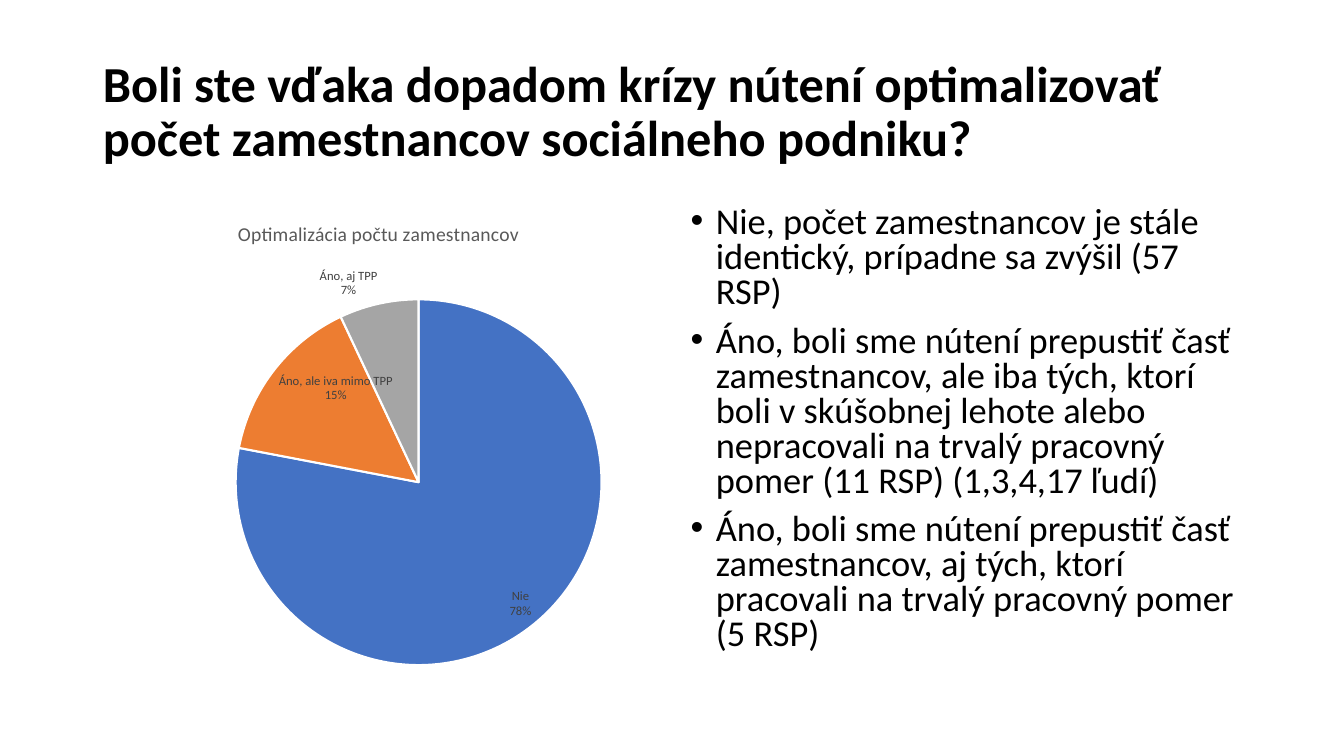
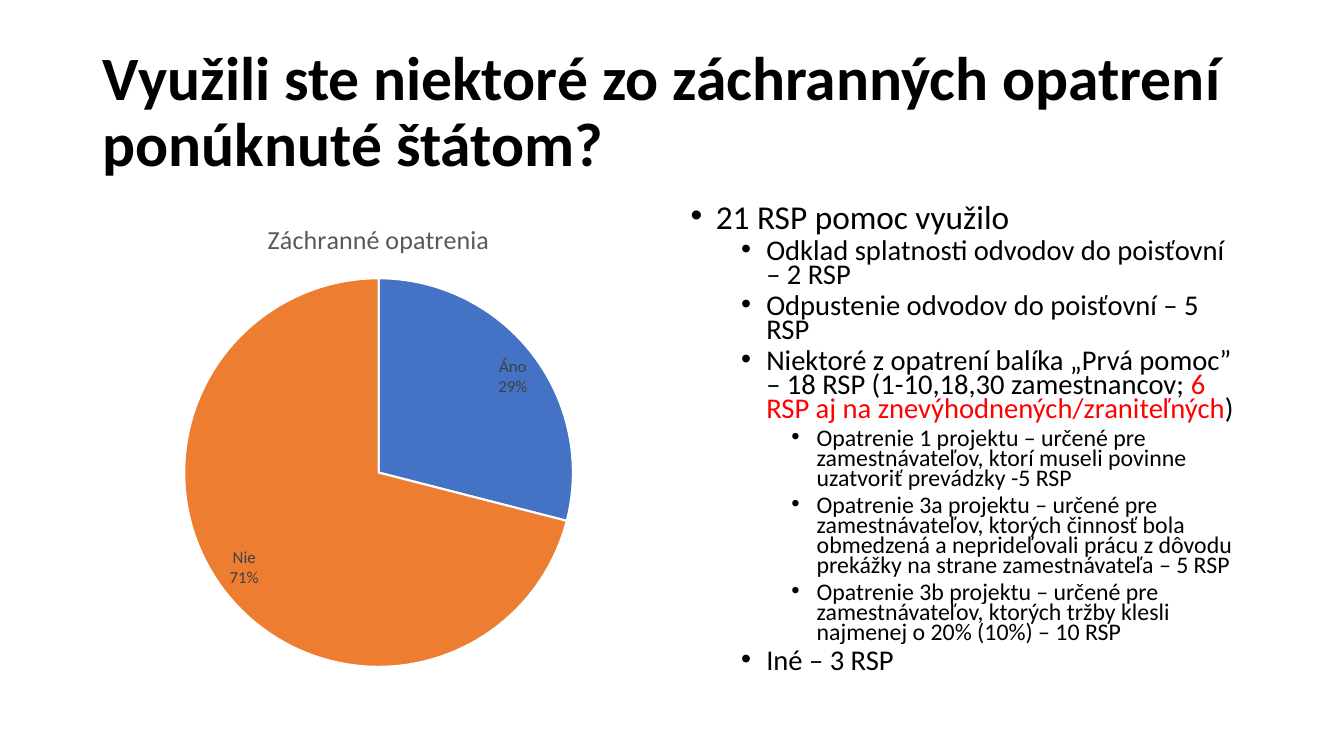
from lxml import etree
from pptx import Presentation
from pptx.chart.data import CategoryChartData
from pptx.dml.color import RGBColor
from pptx.enum.chart import XL_CHART_TYPE, XL_LABEL_POSITION
from pptx.enum.text import MSO_ANCHOR, MSO_AUTO_SIZE, PP_ALIGN
from pptx.oxml.ns import qn
from pptx.util import Inches, Pt

PIE = XL_CHART_TYPE.PIE
INSIDE, OUTSIDE = XL_LABEL_POSITION.INSIDE_END, XL_LABEL_POSITION.OUTSIDE_END
LEFT, TOP, MIDDLE = PP_ALIGN.LEFT, MSO_ANCHOR.TOP, MSO_ANCHOR.MIDDLE
NO_FIT = MSO_AUTO_SIZE.NONE

# Shared style
FONT = "Calibri"
COLORS = {"text": "000000", "accent": "FF0000", "chart_title": "595959",
          "label": "404040", "border": "FFFFFF"}
SLICES = ["4472C4", "ED7D31", "A5A5A5"]
TITLE_BOX = (0.92, 0.4, 11.5, 1.45)
CHART_BOX = (0.92, 2, 5.67, 4.76)
BODY_BOX = (6.75, 2, 5.67, 4.76)


def rgb(name):
    return RGBColor.from_string(COLORS[name])


def style_font(font, size, color="text", bold=False):
    values = {"name": FONT, "size": Pt(size), "bold": bold}
    for attr, value in values.items():
        setattr(font, attr, value)
    font.color.rgb = rgb(color)


def place(sp, box, anchor):
    """Move a placeholder and return its text frame."""
    for attr, value in zip(("left", "top", "width", "height"), box):
        setattr(sp, attr, Inches(value))
    tf = sp.text_frame
    values = {"word_wrap": True, "auto_size": NO_FIT, "vertical_anchor": anchor}
    for attr, value in values.items():
        setattr(tf, attr, value)
    return tf


def add_run(p, text, size, color="text", bold=False):
    r = p.add_run()
    r.text = text
    style_font(r.font, size, color, bold)


def set_title(s, text, size):
    p = place(s.shapes.title, TITLE_BOX, MIDDLE).paragraphs[0]
    p.alignment, p.line_spacing = LEFT, 0.9
    add_run(p, text, size, bold=True)


def set_bullet(p, level):
    pPr = p._p.get_or_add_pPr()
    pPr.set("marL", str(Inches(0.25 + 0.5 * level)))
    pPr.set("indent", str(Inches(-0.25)))
    etree.SubElement(pPr, qn("a:buFont")).set("typeface", "Arial")
    etree.SubElement(pPr, qn("a:buChar")).set("char", "•")


def set_body(s, items, sizes, spacing):
    """Each item is a level and its (text, color) runs; sizes go by level."""
    tf = place(s.placeholders[1], BODY_BOX, TOP)
    for i, (level, runs) in enumerate(items):
        p = tf.add_paragraph() if i else tf.paragraphs[0]
        values = {"level": level, "alignment": LEFT, "line_spacing": spacing,
                  "space_before": Pt(5 if level else 10), "space_after": Pt(0)}
        for attr, value in values.items():
            setattr(p, attr, value)
        set_bullet(p, level)
        for text, color in runs:
            add_run(p, text, sizes[level], color)


def set_plot_area(chart, box):
    """Fix the inner plot area as fractions of the chart."""
    area = next(chart.element.iter(qn("c:plotArea")))
    for old in area.findall(qn("c:layout")):
        area.remove(old)
    layout = etree.Element(qn("c:layout"))
    manual = etree.SubElement(layout, qn("c:manualLayout"))
    values = {"layoutTarget": "inner", "xMode": "edge", "yMode": "edge",
              **dict(zip("xywh", box))}
    for tag, value in values.items():
        etree.SubElement(manual, qn(f"c:{tag}")).set("val", str(value))
    area.insert(0, layout)


def show_name_and_percent(chart):
    """Set every label group to category and percent on two lines."""
    flags = {"showVal": "0", "showCatName": "1", "showPercent": "1"}
    for labels in chart.element.iter(qn("c:dLbls"), qn("c:dLbl")):
        for tag, value in flags.items():
            labels.find(qn(f"c:{tag}")).set("val", value)
        separator = etree.Element(qn("c:separator"))
        separator.text = "\n"
        last = labels.find(qn("c:showBubbleSize"))
        if last is None:
            last = labels.find(qn("c:showPercent"))
        last.addnext(separator)


def add_pie(s, title, shares, title_size, label_size, plot_box, outside=()):
    data = CategoryChartData()
    data.categories = list(shares)
    data.add_series(title, list(shares.values()))
    chart = s.shapes.add_chart(PIE, *map(Inches, CHART_BOX), data).chart
    chart.has_legend = False
    style_font(chart.font, 10)

    # Chart title
    chart.has_title = True
    chart.chart_title.include_in_layout = False
    p = chart.chart_title.text_frame.paragraphs[0]
    add_run(p, title, title_size, "chart_title")

    # Slices
    plot = chart.plots[0]
    plot.vary_by_categories = True
    series = plot.series[0]
    for i in range(len(shares)):
        fmt = series.points[i].format
        fmt.fill.solid()
        fmt.fill.fore_color.rgb = RGBColor.from_string(SLICES[i])
        fmt.line.color.rgb = rgb("border")
        fmt.line.width = Pt(1.5)

    # Labels
    labels = series.data_labels
    values = {"show_value": False, "show_category_name": True,
              "show_percentage": True, "number_format": "0%",
              "number_format_is_linked": False, "position": INSIDE}
    for attr, value in values.items():
        setattr(labels, attr, value)
    style_font(labels.font, label_size, "label")
    for i in outside:
        label = series.points[i].data_label
        style_font(label.font, label_size, "label")
        label.position = OUTSIDE
    show_name_and_percent(chart)
    set_plot_area(chart, plot_box)


def plain(level, text):
    return level, [(text, "text")]


def add_staff_slide(prs):
    s = prs.slides.add_slide(prs.slide_layouts[1])
    set_title(s, "Boli ste vďaka dopadom krízy nútení optimalizovať počet "
                 "zamestnancov sociálneho podniku?", 36)
    set_body(s, [
        plain(0, "Nie, počet zamestnancov je stále identický, prípadne sa "
                 "zvýšil (57 RSP)"),
        plain(0, "Áno, boli sme nútení prepustiť časť zamestnancov, ale iba "
                 "tých, ktorí boli v skúšobnej lehote alebo nepracovali na "
                 "trvalý pracovný pomer (11 RSP) (1,3,4,17 ľudí)"),
        plain(0, "Áno, boli sme nútení prepustiť časť zamestnancov, aj tých, "
                 "ktorí pracovali na trvalý pracovný pomer (5 RSP)"),
    ], [26], 0.8)
    add_pie(s, "Optimalizácia počtu zamestnancov",
            {"Nie": 78, "Áno, ale iva mimo TPP": 15, "Áno, aj TPP": 7},
            14, 9, (0.25, 0.2, 0.64, 0.77), outside=[2])


def add_measures_slide(prs):
    s = prs.slides.add_slide(prs.slide_layouts[1])
    set_title(s, "Využili ste niektoré zo záchranných opatrení ponúknuté "
                 "štátom?", 44)
    add_pie(s, "Záchranné opatrenia", {"Áno": 29, "Nie": 71},
            18.6, 12, (0.16, 0.16, 0.68, 0.81))
    set_body(s, [
        plain(0, "21 RSP pomoc využilo"),
        plain(1, "Odklad splatnosti odvodov do poisťovní – 2 RSP"),
        plain(1, "Odpustenie odvodov do poisťovní – 5 RSP"),
        (1, [("Niektoré z opatrení balíka „Prvá pomoc” – 18 RSP "
              "(1-10,18,30 zamestnancov; ", "text"),
             ("6 RSP aj na znevýhodnených/zraniteľných", "accent"),
             (")", "text")]),
        plain(2, "Opatrenie 1 projektu – určené pre zamestnávateľov, ktorí "
                 "museli povinne uzatvoriť prevádzky -5 RSP"),
        plain(2, "Opatrenie 3a projektu – určené pre zamestnávateľov, ktorých "
                 "činnosť bola obmedzená a neprideľovali prácu z dôvodu "
                 "prekážky na strane zamestnávateľa – 5 RSP"),
        plain(2, "Opatrenie 3b projektu – určené pre zamestnávateľov, ktorých "
                 "tržby klesli najmenej o 20% (10%) – 10 RSP"),
        plain(1, "Iné – 3 RSP"),
    ], [23.8, 20.4, 17], 0.7)


def main():
    prs = Presentation()
    prs.slide_width, prs.slide_height = Inches(13.33), Inches(7.5)
    add_staff_slide(prs)
    add_measures_slide(prs)
    prs.save("out.pptx")


if __name__ == "__main__":
    main()
